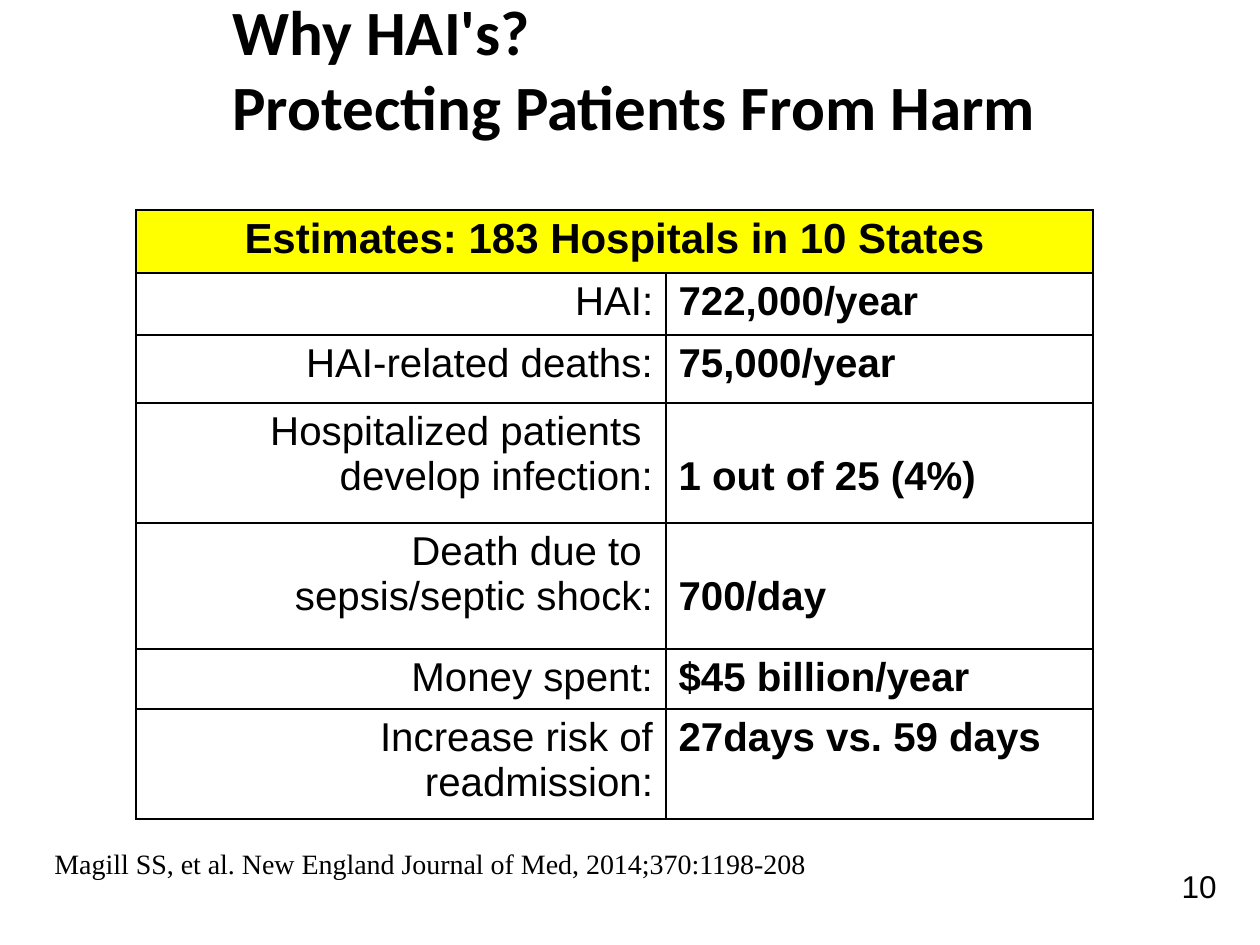
from typing import NamedTuple

from lxml import etree
from pptx import Presentation
from pptx.dml.color import RGBColor
from pptx.enum.text import MSO_ANCHOR, PP_ALIGN
from pptx.oxml.ns import qn
from pptx.util import Emu, Pt

PX = 914400 / 126
BLACK = RGBColor(0x00, 0x00, 0x00)
YELLOW = RGBColor(0xFF, 0xFF, 0x00)
LEFT, CENTER, RIGHT = PP_ALIGN.LEFT, PP_ALIGN.CENTER, PP_ALIGN.RIGHT
TOP, MIDDLE = MSO_ANCHOR.TOP, MSO_ANCHOR.MIDDLE
BORDER_WIDTH = Pt(1)
CELL_MARGIN = 6
VALUE_LINE = 45
COLUMN_WIDTHS = (530, 427)
HEADER_HEIGHT = 63


class Label(NamedTuple):
    text: str
    left: int
    top: int
    width: int
    height: int
    font: dict
    align: PP_ALIGN = LEFT
    anchor: MSO_ANCHOR = TOP
    margin_bottom: int = 6


class Estimate(NamedTuple):
    name: str
    value: str
    height: int
    value_line: int = 0


TITLE_FONT = {"name": "Calibri", "size": Pt(36), "bold": True}
SOURCE_FONT = {"name": "Times New Roman", "size": Pt(16)}
NUMBER_FONT = {"name": "Arial", "size": Pt(18)}
HEADER_FONT = {"name": "Arial", "size": Pt(24), "bold": True}
NAME_FONT = {"name": "Arial", "size": Pt(23), "bold": False}
VALUE_FONT = NAME_FONT | {"bold": True}

LABELS = (
    Label("Why HAI's?\vProtecting Patients From Harm", 220, 21, 1012, 170,
          TITLE_FONT, anchor=MIDDLE, margin_bottom=83),
    Label("Magill SS, et al. New England Journal of Med, 2014;370:1198-208",
          42, 840, 788, 81, SOURCE_FONT),
    Label("10", 935, 861, 294, 66, NUMBER_FONT, RIGHT),
)

HEADER = "Estimates: 183 Hospitals in 10 States"
ESTIMATES = (
    Estimate("HAI:", "722,000/year", 62),
    Estimate("HAI-related deaths:", "75,000/year", 68),
    Estimate("Hospitalized patients \vdevelop infection:", "1 out of 25 (4%)", 120, 1),
    Estimate("Death due to \vsepsis/septic shock:", "700/day", 126, 1),
    Estimate("Money spent:", "$45 billion/year", 60),
    Estimate("Increase risk of readmission:", "27days vs. 59 days", 110),
)


def px(length: int) -> Emu:
    return Emu(round(length * PX))


def write(frame, text: str, font: dict, align: PP_ALIGN) -> None:
    frame.text = text
    para = frame.paragraphs[0]
    para.alignment = align
    for span in para.runs:
        for key, value in font.items():
            setattr(span.font, key, value)
        span.font.color.rgb = BLACK


def add_label(slide, label: Label) -> None:
    box = slide.shapes.add_textbox(
        px(label.left), px(label.top), px(label.width), px(label.height))
    frame = box.text_frame
    frame.word_wrap = True
    frame.vertical_anchor = label.anchor
    frame.margin_bottom = px(label.margin_bottom)
    write(frame, label.text, label.font, label.align)


def add_borders(cell) -> None:
    properties = cell._tc.get_or_add_tcPr()
    for side in ("lnL", "lnR", "lnT", "lnB"):
        line = etree.SubElement(properties, qn(f"a:{side}"), w=str(BORDER_WIDTH))
        fill = etree.SubElement(line, qn("a:solidFill"))
        etree.SubElement(fill, qn("a:srgbClr"), val=str(BLACK))


def fill_cell(cell, text: str, font: dict, align: PP_ALIGN, skipped_lines: int = 0) -> None:
    """Write a cell, lowering its text by the given number of lines."""
    cell.margin_top = px(CELL_MARGIN + skipped_lines * VALUE_LINE)
    write(cell.text_frame, text, font, align)


def add_estimates(slide) -> None:
    heights = (HEADER_HEIGHT, *(estimate.height for estimate in ESTIMATES))
    table = slide.shapes.add_table(
        len(heights), len(COLUMN_WIDTHS), px(136), px(210),
        px(sum(COLUMN_WIDTHS)), px(sum(heights))).table
    table.first_row = False
    table.horz_banding = False
    for column, width in zip(table.columns, COLUMN_WIDTHS):
        column.width = px(width)
    for row, height in zip(table.rows, heights):
        row.height = px(height)
    for cell in table.iter_cells():
        add_borders(cell)
        cell.fill.background()

    header = table.cell(0, 0)
    header.merge(table.cell(0, 1))
    header.fill.solid()
    header.fill.fore_color.rgb = YELLOW
    fill_cell(header, HEADER, HEADER_FONT, CENTER)
    for row, estimate in enumerate(ESTIMATES, start=1):
        fill_cell(table.cell(row, 0), estimate.name, NAME_FONT, RIGHT)
        fill_cell(table.cell(row, 1), estimate.value, VALUE_FONT, LEFT, estimate.value_line)


def main() -> None:
    deck = Presentation()
    deck.slide_width, deck.slide_height = px(1260), px(945)
    slide = deck.slides.add_slide(deck.slide_layouts[6])
    add_estimates(slide)
    for label in LABELS:
        add_label(slide, label)
    deck.save("out.pptx")


if __name__ == "__main__":
    main()
